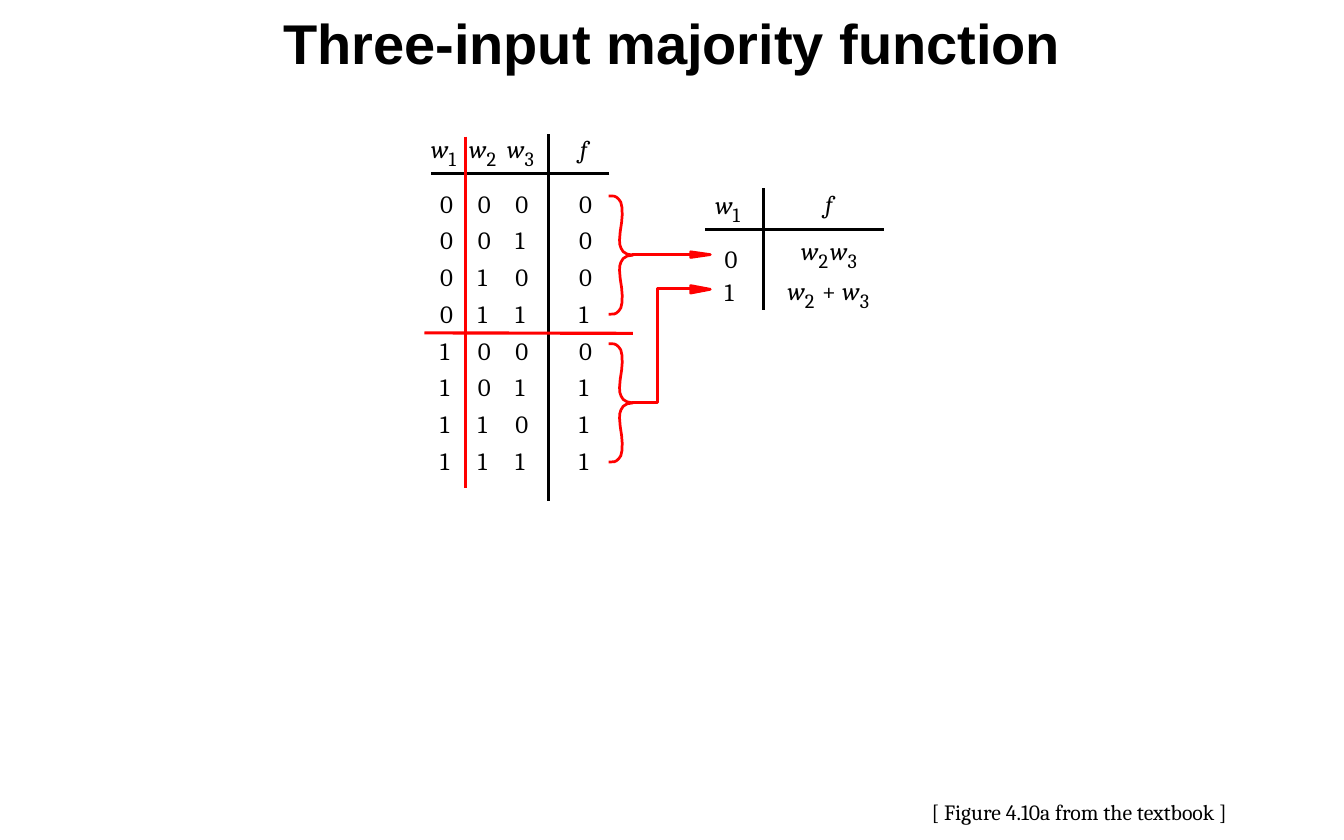
from pptx import Presentation
from pptx.dml.color import RGBColor as RGB
from pptx.enum.shapes import MSO_CONNECTOR as CONN
from pptx.enum.text import MSO_ANCHOR as ANCHOR, MSO_AUTO_SIZE as AUTO, PP_ALIGN as ALIGN
from pptx.oxml.ns import qn
from pptx.util import Pt
from lxml.etree import SubElement

COLORS = {"ink": "000000", "mark": "FF0000"}
ROWS = [(0, 0, 0, 0), (0, 0, 1, 0), (0, 1, 0, 0), (0, 1, 1, 1),
        (1, 0, 0, 0), (1, 0, 1, 1), (1, 1, 0, 1), (1, 1, 1, 1)]
COLS = [283, 307.3, 331.3, 372.3]
TOP, STEP = 121, 23.65

# Upper half of a brace, from its tip to its nose
CURL = [(0, 0), (3.6, 0.1), (5, 0.7), (6.5, 2), (7.9, 4), (8.6, 7.2), (8.8, 12),
        (8.4, 17), (7.5, 23), (7.1, 28), (7.2, 31), (8, 33.5), (9.4, 35.8),
        (12, 37.4), (15.8, 38)]


def color(name):
    return RGB.from_string(COLORS[name])


def style(font, size, face="Cambria", bold=False, italic=False):
    font.name, font.size = face, Pt(size)
    font.bold, font.italic = bold, italic
    font.color.rgb = color("ink")


def label(slide, text, x, y, wide, high=19.4, size=16, italic=False, inset=0):
    box = slide.shapes.add_textbox(Pt(x), Pt(y), Pt(wide), Pt(high))
    frame = box.text_frame
    frame.word_wrap = False
    frame.auto_size = AUTO.SHAPE_TO_FIT_TEXT
    frame.margin_left = frame.margin_right = Pt(2 * inset)
    frame.margin_top = frame.margin_bottom = Pt(inset)
    frame.text = text
    style(frame.paragraphs[0].runs[0].font, size, italic=italic)


def digit(slide, value, x, y):
    label(slide, str(value), x, y, 12.2)


def input_var(slide, index, x, y):
    label(slide, "w", x, y, 15.8, italic=True)
    label(slide, str(index), x + 11.2, y + 8.2, 10, 15.8, size=13)


def output_var(slide, x, y):
    label(slide, "f", x, y, 9.4, italic=True)


def rule(slide, x1, y1, x2, y2, hue="ink", width=1.75):
    line = slide.shapes.add_connector(CONN.STRAIGHT, Pt(x1), Pt(y1), Pt(x2), Pt(y2))
    line.line.color.rgb = color(hue)
    line.line.width = Pt(width)
    SubElement(line._element.spPr, qn("a:effectLst"))


def outline(slide, points, closed=False):
    spots = [(Pt(x), Pt(y)) for x, y in points]
    pen = slide.shapes.build_freeform(*spots[0], scale=1.0)
    pen.add_line_segments(spots[1:], close=closed)
    shape = pen.convert_to_shape()
    shape.shadow.inherit = False
    if closed:
        shape.fill.solid()
        shape.fill.fore_color.rgb = color("mark")
    else:
        shape.fill.background()
    shape.line.color.rgb = color("mark")
    shape.line.width = Pt(1.75)


def brace(slide, x, y):
    lower = [(dx, 76 - dy) for dx, dy in reversed(CURL[:-1])]
    outline(slide, [(x + dx, y + dy) for dx, dy in CURL + lower])


def arrow_head(slide, y, half):
    outline(slide, [(444, y + half), (456.6, y), (444, y - half)], closed=True)


def add_title(slide, text):
    title = slide.shapes.title
    title.left, title.top, title.width, title.height = Pt(72), Pt(0), Pt(720), Pt(59.8)
    frame = title.text_frame
    frame.text = text
    frame.word_wrap = True
    frame.auto_size = AUTO.NONE
    frame.vertical_anchor = ANCHOR.MIDDLE
    para = frame.paragraphs[0]
    para.alignment = ALIGN.CENTER
    para.line_spacing = 0.9
    style(para.runs[0].font, 36, "Arial", bold=True)


def truth_table(slide):
    rule(slide, 391.7, 111.5, 277, 111.5, width=0)
    rule(slide, 352.6, 321.8, 352.6, 86.4, width=0)
    for index in range(3):
        input_var(slide, index + 1, 277.2 + 24.4 * index, 85.7)
    output_var(slide, 373, 85.7)
    for row, values in enumerate(ROWS):
        for x, value in zip(COLS, values):
            digit(slide, value, x, TOP + STEP * row)
    # Split by the first input
    rule(slide, 299, 87.8, 299, 313.9, "mark", 2)
    rule(slide, 272.9, 214, 406.8, 214.3, "mark", 2)


def links(slide):
    for y in (126, 221):
        brace(slide, 391.2, y)
    rule(slide, 444, 163.8, 406.4, 163.8, "mark")
    arrow_head(slide, 163.7, 1.8)
    outline(slide, [(444, 185.3), (422.8, 185.3), (422.8, 259), (406.4, 259)])
    arrow_head(slide, 186, 2.4)


def short_table(slide):
    rule(slide, 568.1, 147.5, 453, 147.5)
    rule(slide, 491, 199.3, 491, 121)
    input_var(slide, 1, 459.8, 122)
    output_var(slide, 530.6, 121)
    for value, y in enumerate((156.4, 177.8)):
        digit(slide, value, 465.8, y)
    for index, x, y in [(2, 515, 151.4), (3, 533.7, 151.4),
                        (2, 506.3, 177), (3, 541.6, 177)]:
        input_var(slide, index, x, y)
    label(slide, "+", 528.5, 177, 13)


def main():
    deck = Presentation()
    deck.slide_width, deck.slide_height = Pt(864), Pt(540)
    slide = deck.slides.add_slide(deck.slide_layouts[5])
    add_title(slide, "Three-input majority function")
    truth_table(slide)
    links(slide)
    short_table(slide)
    # Source note
    label(slide, "[ Figure 4.10a from the textbook ]", 591.8, 509.8, 207.4, 24.2,
          size=14, inset=3.6)
    deck.save("out.pptx")


if __name__ == "__main__":
    main()
